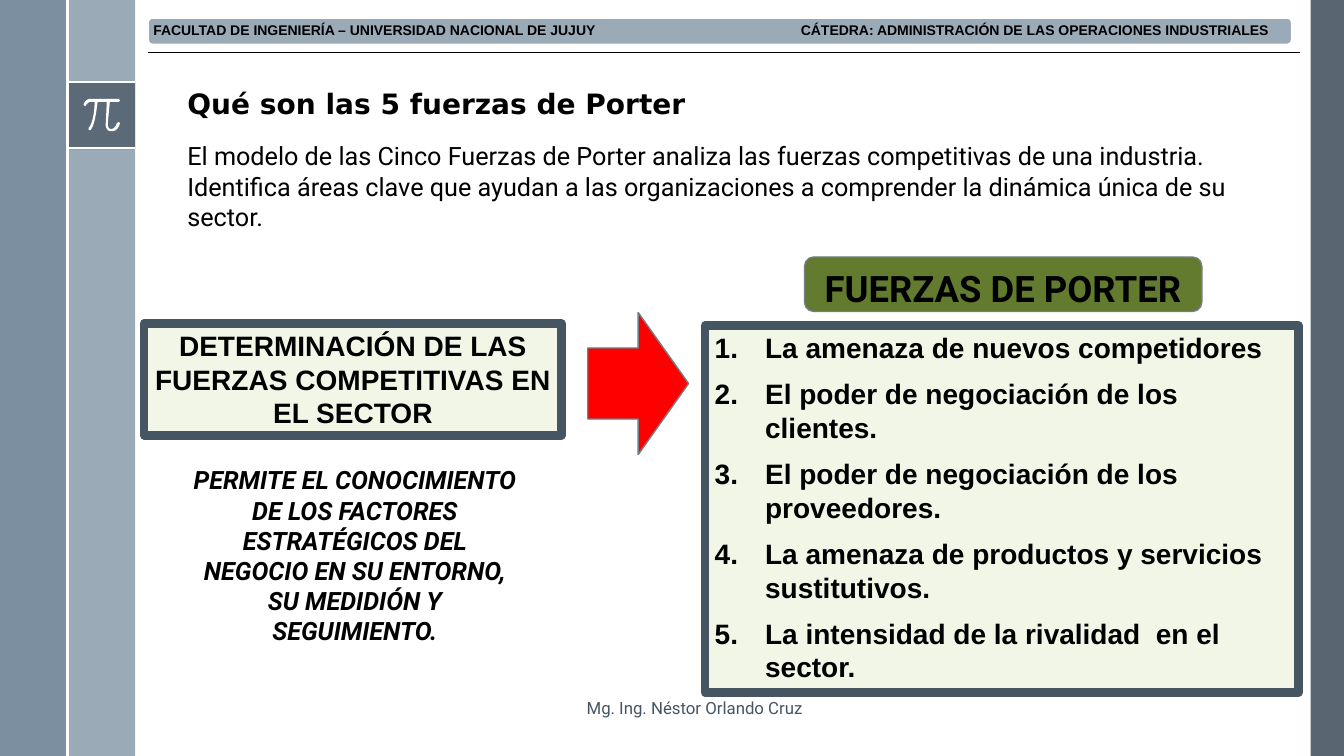
from dataclasses import dataclass

from lxml.etree import SubElement
from pptx import Presentation
from pptx.dml.color import RGBColor
from pptx.enum.shapes import MSO_CONNECTOR, MSO_SHAPE
from pptx.enum.text import MSO_ANCHOR, MSO_AUTO_SIZE, PP_ALIGN
from pptx.oxml.ns import qn
from pptx.shapes.autoshape import Shape
from pptx.slide import Slide
from pptx.text.text import TextFrame, _Paragraph
from pptx.util import Inches, Pt

BLACK = RGBColor(0x00, 0x00, 0x00)
WHITE = RGBColor(0xFF, 0xFF, 0xFF)
SLATE = RGBColor(0x47, 0x55, 0x62)
INK = RGBColor(0x46, 0x55, 0x62)
STEEL = RGBColor(0x6A, 0x80, 0x93)
MIST = RGBColor(0x9B, 0xAA, 0xB7)
EDGE = RGBColor(0x73, 0x7E, 0x87)
OLIVE = RGBColor(0x63, 0x7B, 0x2E)
CREAM = RGBColor(0xF1, 0xF6, 0xE6)
RED = RGBColor(0xFF, 0x00, 0x00)


@dataclass(frozen=True)
class Box:
    left: float
    top: float
    width: float
    height: float


@dataclass(frozen=True)
class Panel:
    box: Box
    fill: RGBColor
    preset: MSO_SHAPE = MSO_SHAPE.RECTANGLE
    opacity: int = 100
    line: RGBColor | None = None
    weight: float = 1


@dataclass(frozen=True)
class Rule:
    x1: float
    y1: float
    x2: float
    y2: float
    color: RGBColor
    weight: float


@dataclass(frozen=True)
class Style:
    font: str
    size: float
    color: RGBColor = BLACK
    bold: bool = True
    italic: bool = False


BACKDROP = [
    Panel(Box(13, 0, 0.33, 7.5), SLATE, opacity=90),
    Panel(Box(0.67, 0, 0.67, 7.5), MIST),
    Panel(Box(0, 0, 0.67, 7.5), STEEL, opacity=88),
    Panel(Box(0.67, 0.81, 0.67, 0.67), SLATE, opacity=75),
]
RULES = [
    Rule(0.67, 0.81, 1.34, 0.81, WHITE, 1.5),
    Rule(0.67, 1.47, 1.34, 1.47, WHITE, 1.5),
    Rule(0.67, 0, 0.67, 7.5, WHITE, 1.5),
    Rule(1.47, 0.52, 12.89, 0.52, BLACK, 0.5),
]
HEADER_BAR = Panel(Box(1.47, 0.18, 11.34, 0.26), MIST, MSO_SHAPE.ROUNDED_RECTANGLE, line=WHITE)
PORTER_BADGE = Panel(Box(7.98, 2.55, 3.94, 0.54), OLIVE, MSO_SHAPE.ROUNDED_RECTANGLE, line=EDGE)
SECTOR_PANEL = Panel(Box(1.43, 3.21, 4.14, 1.11), CREAM, line=INK, weight=6)
FORCES_PANEL = Panel(Box(6.99, 3.23, 5.89, 3.64), CREAM, line=INK, weight=6)
ARROW = Panel(Box(5.83, 3.1, 1, 1.41), RED, MSO_SHAPE.RIGHT_ARROW, line=EDGE)

PI_START = (1.18, 0.98)
PI_SEGMENTS = [
    (0.9, 0.98), (0.85, 0.98, 0.83, 1.03, 0.83, 1.04), (0.84, 1.05), (0.85, 1.05),
    (0.85, 1.05, 0.87, 1.01, 0.9, 1.01), (0.94, 1.01),
    (0.94, 1.05, 0.93, 1.22, 0.88, 1.27), (0.88, 1.29), (0.9, 1.29),
    (0.95, 1.23, 0.96, 1.05, 0.97, 1.01), (1.06, 1.01), (1.05, 1.22),
    (1.05, 1.22, 1.04, 1.26, 1.07, 1.29), (1.08, 1.3, 1.09, 1.3, 1.1, 1.3), (1.12, 1.3),
    (1.17, 1.3, 1.19, 1.23, 1.19, 1.22), (1.18, 1.21), (1.16, 1.22),
    (1.16, 1.22, 1.15, 1.27, 1.11, 1.28), (1.1, 1.28, 1.09, 1.28, 1.08, 1.27),
    (1.07, 1.26, 1.07, 1.23, 1.07, 1.22), (1.09, 1.01), (1.18, 1.01), (1.19, 1),
]

HEADING = Style("Arial", 20)
FORCES = [
    "La amenaza de nuevos competidores",
    "El poder de negociación de los clientes.",
    "El poder de negociación de los proveedores.",
    "La amenaza de productos y servicios sustitutivos.",
    "La intensidad de la rivalidad  en el sector.",
]


def add_panel(slide: Slide, panel: Panel) -> Shape:
    box = panel.box
    shape = slide.shapes.add_shape(
        panel.preset, Inches(box.left), Inches(box.top), Inches(box.width), Inches(box.height))
    shape.shadow.inherit = False
    shape.fill.solid()
    shape.fill.fore_color.rgb = panel.fill
    if panel.opacity < 100:
        color = shape.fill._xPr.find(qn("a:solidFill"))[0]
        SubElement(color, qn("a:alpha"), val=str(panel.opacity * 1000))
    if panel.line is None:
        shape.line.fill.background()
    else:
        shape.line.color.rgb = panel.line
        shape.line.width = Pt(panel.weight)
    return shape


def add_rule(slide: Slide, rule: Rule) -> None:
    connector = slide.shapes.add_connector(
        MSO_CONNECTOR.STRAIGHT, Inches(rule.x1), Inches(rule.y1), Inches(rule.x2), Inches(rule.y2))
    connector.line.color.rgb = rule.color
    connector.line.width = Pt(rule.weight)
    SubElement(connector._element.spPr, qn("a:effectLst"))


def trace_pi(steps: int = 6) -> list[tuple[float, float]]:
    points = [PI_START]
    for segment in PI_SEGMENTS:
        if len(segment) == 2:
            points.append(segment)
            continue
        knots = [points[-1], segment[:2], segment[2:4], segment[4:]]
        for step in range(1, steps + 1):
            t = step / steps
            weights = ((1 - t) ** 3, 3 * t * (1 - t) ** 2, 3 * t * t * (1 - t), t ** 3)
            x, y = (sum(w * k[axis] for w, k in zip(weights, knots)) for axis in (0, 1))
            points.append((x, y))
    return points


def add_pi(slide: Slide) -> None:
    points = [(Inches(x), Inches(y)) for x, y in trace_pi()]
    builder = slide.shapes.build_freeform(*points[0])
    builder.add_line_segments(points[1:], close=True)
    symbol = builder.convert_to_shape()
    symbol.shadow.inherit = False
    symbol.fill.solid()
    symbol.fill.fore_color.rgb = WHITE
    symbol.line.fill.background()


def add_frame(slide: Slide, box: Box) -> TextFrame:
    return fit(slide.shapes.add_textbox(
        Inches(box.left), Inches(box.top), Inches(box.width), Inches(box.height)).text_frame)


def fit(frame: TextFrame) -> TextFrame:
    frame.word_wrap = True
    frame.auto_size = MSO_AUTO_SIZE.SHAPE_TO_FIT_TEXT
    frame.vertical_anchor = MSO_ANCHOR.TOP
    return frame


def write(paragraph: _Paragraph, text: str, style: Style, align: PP_ALIGN = PP_ALIGN.LEFT) -> None:
    paragraph.alignment = align
    run = paragraph.add_run()
    run.text = text
    font = run.font
    font.name, font.size, font.color.rgb = style.font, Pt(style.size), style.color
    font.bold, font.italic = style.bold, style.italic


def add_header(slide: Slide) -> None:
    add_panel(slide, HEADER_BAR)
    frame = add_frame(slide, Box(1.48, 0.19, 11.31, 0.24))
    frame.auto_size = MSO_AUTO_SIZE.NONE
    frame.vertical_anchor = MSO_ANCHOR.MIDDLE
    frame.margin_left = frame.margin_right = frame.margin_top = frame.margin_bottom = Inches(0.04)
    paragraph = frame.paragraphs[0]
    paragraph.line_spacing = 0.9
    write(paragraph, "FACULTAD DE INGENIERÍA – UNIVERSIDAD NACIONAL DE JUJUY\t"
          "CÁTEDRA: ADMINISTRACIÓN DE LAS OPERACIONES INDUSTRIALES", Style("Arial", 10))
    tabs = SubElement(paragraph._p.get_or_add_pPr(), qn("a:tabLst"))
    SubElement(tabs, qn("a:tab"), pos=str(Inches(11.06)), algn="r")


def add_introduction(slide: Slide) -> None:
    frame = add_frame(slide, Box(1.76, 0.67, 10.75, 1.7))
    title = frame.paragraphs[0]
    title.line_spacing, title.space_before, title.space_after = Pt(33.8), Pt(30), Pt(15)
    write(title, "Qué son las 5 fuerzas de Porter", Style("DejaVu Sans", 20))
    write(frame.add_paragraph(), "El modelo de las Cinco Fuerzas de Porter analiza las fuerzas "
          "competitivas de una industria. Identifica áreas clave que ayudan a las organizaciones "
          "a comprender la dinámica única de su sector.", Style("Roboto", 18, bold=False))


def add_forces(slide: Slide) -> None:
    frame = fit(add_panel(slide, FORCES_PANEL).text_frame)
    for index, force in enumerate(FORCES):
        paragraph = frame.add_paragraph() if index else frame.paragraphs[0]
        paragraph.space_before = Pt(9)
        write(paragraph, force, HEADING)
        properties = paragraph._p.get_or_add_pPr()
        properties.set("marL", str(Inches(0.5)))
        properties.set("indent", str(Inches(-0.5)))
        SubElement(properties, qn("a:buAutoNum"), type="arabicPeriod")


def main() -> None:
    deck = Presentation()
    deck.slide_width, deck.slide_height = Inches(13.33), Inches(7.5)
    slide = deck.slides.add_slide(deck.slide_layouts[6])
    for panel in BACKDROP:
        add_panel(slide, panel)
    for rule in RULES:
        add_rule(slide, rule)
    add_pi(slide)
    write(add_frame(slide, Box(5.72, 6.87, 3.23, 0.3)).paragraphs[0],
          "Mg. Ing. Néstor Orlando Cruz", Style("Roboto", 12, INK, bold=False))
    add_header(slide)
    add_introduction(slide)
    add_panel(slide, PORTER_BADGE)
    write(add_frame(slide, Box(7.98, 2.59, 3.94, 0.54)).paragraphs[0],
          "FUERZAS DE PORTER", Style("Roboto", 26), PP_ALIGN.CENTER)
    write(fit(add_panel(slide, SECTOR_PANEL).text_frame).paragraphs[0],
          "DETERMINACIÓN DE LAS FUERZAS COMPETITIVAS EN EL SECTOR", HEADING, PP_ALIGN.CENTER)
    add_forces(slide)
    add_panel(slide, ARROW)
    write(add_frame(slide, Box(1.82, 4.56, 3.4, 1.92)).paragraphs[0],
          "PERMITE EL CONOCIMIENTO DE LOS FACTORES ESTRATÉGICOS DEL NEGOCIO EN SU ENTORNO, "
          "SU MEDIDIÓN Y SEGUIMIENTO.", Style("Roboto", 18, italic=True), PP_ALIGN.CENTER)
    deck.save("out.pptx")


if __name__ == "__main__":
    main()
